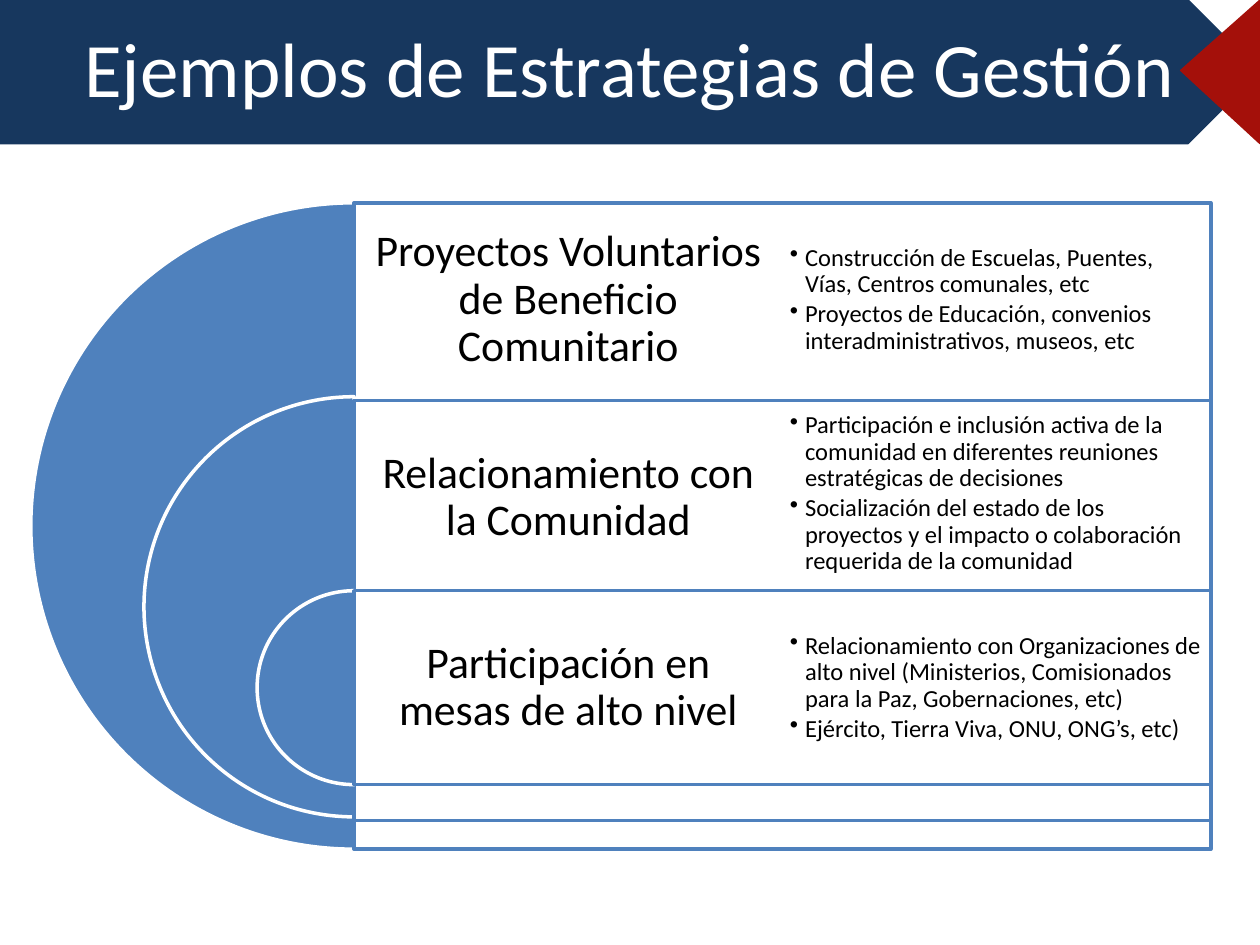
from lxml import etree
from pptx import Presentation
from pptx.dml.color import RGBColor
from pptx.enum.shapes import MSO_SHAPE
from pptx.enum.text import MSO_ANCHOR, PP_ALIGN
from pptx.oxml.ns import qn
from pptx.util import Inches, Pt

PENTAGON, TRIANGLE = MSO_SHAPE.PENTAGON, MSO_SHAPE.ISOSCELES_TRIANGLE
PIE, RECTANGLE = MSO_SHAPE.PIE, MSO_SHAPE.RECTANGLE
TOP, MIDDLE = MSO_ANCHOR.TOP, MSO_ANCHOR.MIDDLE
CENTER, LEFT = PP_ALIGN.CENTER, PP_ALIGN.LEFT

THEME = {
    "font": "Calibri",
    "navy": RGBColor.from_string("17375E"),
    "red": RGBColor.from_string("A4100A"),
    "blue": RGBColor.from_string("4F81BD"),
    "white": RGBColor.from_string("FFFFFF"),
    "black": RGBColor.from_string("000000"),
    "title": Pt(44),
    "strategy": Pt(25),
    "example": Pt(14),
    "edge": Pt(0.75),
    "outline": Pt(2),
}

STRATEGIES = [
    ("Proyectos Voluntarios de Beneficio Comunitario", 1, 0,
     ["Construcción de Escuelas, Puentes, Vías, Centros comunales, etc",
      "Proyectos de Educación, convenios interadministrativos, museos, etc"]),
    ("Relacionamiento con la Comunidad", 0.65, 0.03,
     ["Participación e inclusión activa de la comunidad en diferentes reuniones "
      "estratégicas de decisiones",
      "Socialización del estado de los proyectos y el impacto o colaboración "
      "requerida de la comunidad"]),
    ("Participación en mesas de alto nivel", 0.3, 0,
     ["Relacionamiento con Organizaciones de alto nivel (Ministerios, Comisionados "
      "para la Paz, Gobernaciones, etc)",
      "Ejército, Tierra Viva, ONU, ONG’s, etc)"]),
]

deck = Presentation()
deck.slide_width, deck.slide_height = Inches(10), Inches(7.5)
slide = deck.slides.add_slide(deck.slide_layouts[6])


def add_figure(preset, box, fill, line, weight, adjustments=()):
    figure = slide.shapes.add_shape(preset, *map(Inches, box))
    figure.shadow.inherit = False
    figure.fill.solid()
    figure.fill.fore_color.rgb = THEME[fill]
    figure.line.color.rgb = THEME[line]
    figure.line.width = THEME[weight]
    for index, value in enumerate(adjustments):
        figure.adjustments[index] = value
    return figure


def add_text(box, lines, size, color, align, anchor, inset, spacing=1, bullet=None):
    frame = slide.shapes.add_textbox(*map(Inches, box)).text_frame
    frame_format = {"word_wrap": True, "vertical_anchor": anchor}
    frame_format.update({f"margin_{side}": Inches(inset)
                         for side in ("left", "right", "top", "bottom")})
    for name, value in frame_format.items():
        setattr(frame, name, value)
    for index, line in enumerate(lines):
        paragraph = frame.add_paragraph() if index else frame.paragraphs[0]
        paragraph_format = {"text": line, "alignment": align, "line_spacing": spacing}
        if bullet:
            properties = paragraph._p.get_or_add_pPr()
            properties.set("marL", str(Inches(0.12)))
            properties.set("indent", str(-Inches(0.12)))
            etree.SubElement(properties, qn("a:buChar"), char=bullet)
            paragraph_format["space_after"] = Pt(2)
        for name, value in paragraph_format.items():
            setattr(paragraph, name, value)
        for name, value in {"name": THEME["font"], "size": THEME[size]}.items():
            setattr(paragraph.font, name, value)
        paragraph.font.color.rgb = THEME[color]


WIDTH = 10
BANNER = 1.14
TIP = 0.63
add_figure(PENTAGON, (0, 0, WIDTH, BANNER), "navy", "navy", "edge")
arrow_box = (WIDTH - (TIP + BANNER) / 2, (BANNER - TIP) / 2, BANNER, TIP)
arrow = add_figure(TRIANGLE, arrow_box, "red", "red", "edge", [0.51])
arrow.rotation = 270
add_text((0.5, 0.07, WIDTH - 1, 1.25), ["Ejemplos de Estrategias de Gestión"],
         "title", "white", CENTER, TOP, 0.09)

AXIS, GRID_TOP = 2.81, 1.61
DIAMETER = 5.13
ROW = 0.3 * DIAMETER
COLUMN = 3.4

for row, (strategy, share, drop, examples) in enumerate(STRATEGIES):
    top = GRID_TOP + row * ROW
    size = DIAMETER * share
    add_figure(PIE, (AXIS - size / 2, top, size, size), "blue", "white", "outline", [54, 162])
    panel = add_figure(RECTANGLE, (AXIS, top + drop, 2 * COLUMN, size), "white", "blue", "outline")
    tint = panel.fill._xPr.find(qn("a:solidFill"))[0]
    etree.SubElement(tint, qn("a:alpha"), val="90000")
    add_text((AXIS, top + drop, COLUMN, ROW), [strategy],
             "strategy", "black", CENTER, MIDDLE, 0.1, 0.9)
    add_text((AXIS + COLUMN, top, COLUMN, ROW), examples,
             "example", "black", LEFT, MIDDLE, 0.06, 0.9, "•")

deck.save("out.pptx")
